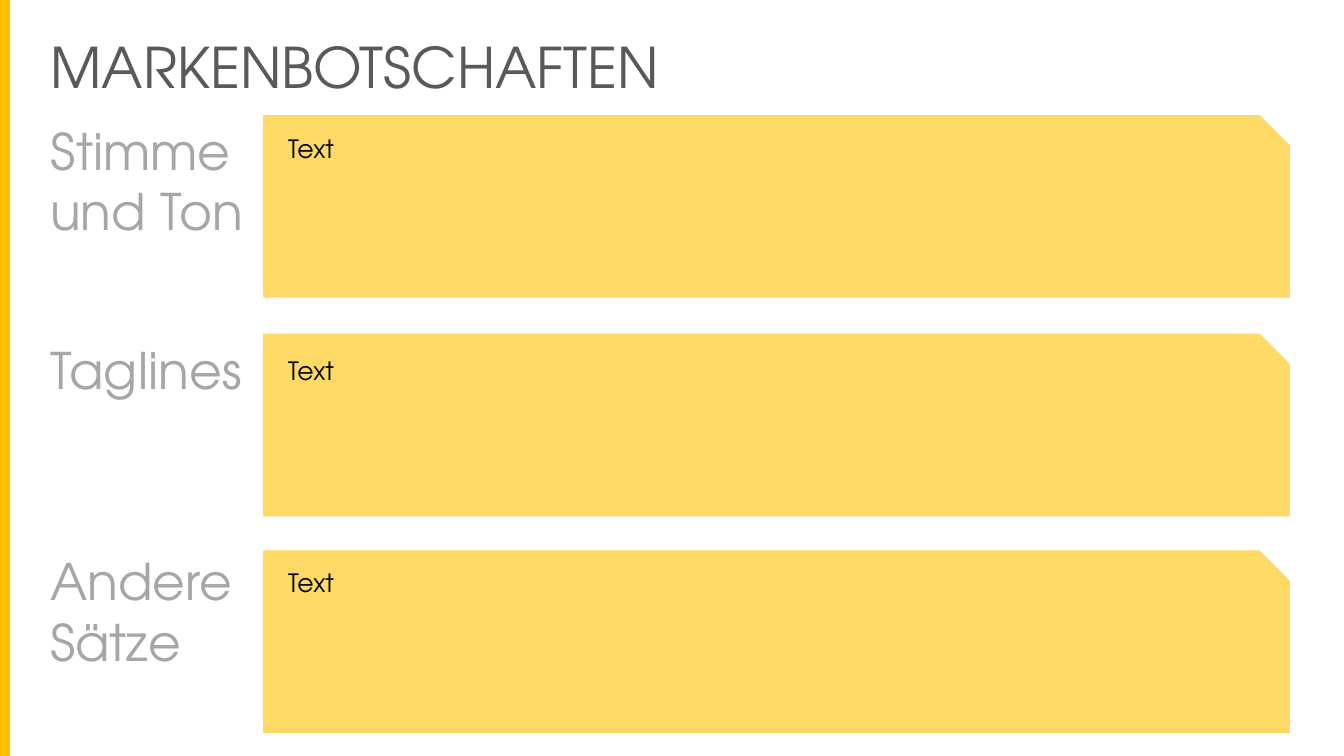
from pptx import Presentation
from pptx.dml.color import RGBColor
from pptx.enum.shapes import MSO_SHAPE
from pptx.enum.text import MSO_AUTO_SIZE
from pptx.util import Cm, Pt

# Content: label lines, message, then tops of panel, label and message in cm
TITLE = "MARKENBOTSCHAFTEN"
SECTIONS = [
    (["Stimme", "und Ton"], "Text", 2.9, 2.9, 3.23),
    (["Taglines"], "Text", 8.41, 8.41, 8.84),
    (["Andere Sätze"], "Text", 13.87, 13.74, 14.17),
]

# Style
FONT = "TeX Gyre Adventor"
AMBER = RGBColor(0xFF, 0xC0, 0x00)
PALE_AMBER = RGBColor(0xFF, 0xD9, 0x66)
DARK_GREY = RGBColor(0x59, 0x59, 0x59)
LIGHT_GREY = RGBColor(0xA6, 0xA6, 0xA6)
BLACK = RGBColor(0x00, 0x00, 0x00)

# Layout in cm
SLIDE_WIDTH, SLIDE_HEIGHT = 33.87, 19.05
MARGIN_LEFT = 1.02
PANEL_LEFT, PANEL_WIDTH, PANEL_HEIGHT = 6.63, 25.88, 4.6
LABEL_WIDTH, LABEL_LINE_HEIGHT = 6.5, 1.8
MESSAGE_LEFT, MESSAGE_WIDTH, MESSAGE_HEIGHT = 7.01, 17.22, 1.02


def add_block(slide, kind, left, top, width, height, color):
    block = slide.shapes.add_shape(kind, Cm(left), Cm(top), Cm(width), Cm(height))
    block.shadow.inherit = False
    block.fill.solid()
    block.fill.fore_color.rgb = color
    block.line.fill.background()


def add_text(slide, lines, left, top, width, height, size, color, wrap=True):
    box = slide.shapes.add_textbox(Cm(left), Cm(top), Cm(width), Cm(height))
    frame = box.text_frame
    frame.word_wrap = wrap
    frame.auto_size = MSO_AUTO_SIZE.SHAPE_TO_FIT_TEXT
    frame.text = "\n".join(lines)
    for paragraph in frame.paragraphs:
        paragraph.font.name = FONT
        paragraph.font.size = Pt(size)
        paragraph.font.color.rgb = color


def main():
    deck = Presentation()
    deck.slide_width, deck.slide_height = Cm(SLIDE_WIDTH), Cm(SLIDE_HEIGHT)
    slide = deck.slides.add_slide(deck.slide_layouts[6])

    # Accent bar and title
    add_block(slide, MSO_SHAPE.RECTANGLE, 0, 0, 0.25, SLIDE_HEIGHT, AMBER)
    add_text(slide, [TITLE], MARGIN_LEFT, 0.69, 16.08, 1.96, 40, DARK_GREY, wrap=False)

    # One panel, label and message per section
    for label, message, panel_top, label_top, message_top in SECTIONS:
        add_block(slide, MSO_SHAPE.SNIP_1_RECTANGLE, PANEL_LEFT, panel_top,
                  PANEL_WIDTH, PANEL_HEIGHT, PALE_AMBER)
        add_text(slide, label, MARGIN_LEFT, label_top, LABEL_WIDTH,
                 LABEL_LINE_HEIGHT * len(label), 36, LIGHT_GREY)
        add_text(slide, [message], MESSAGE_LEFT, message_top, MESSAGE_WIDTH,
                 MESSAGE_HEIGHT, 18, BLACK)

    deck.save("out.pptx")


if __name__ == "__main__":
    main()
